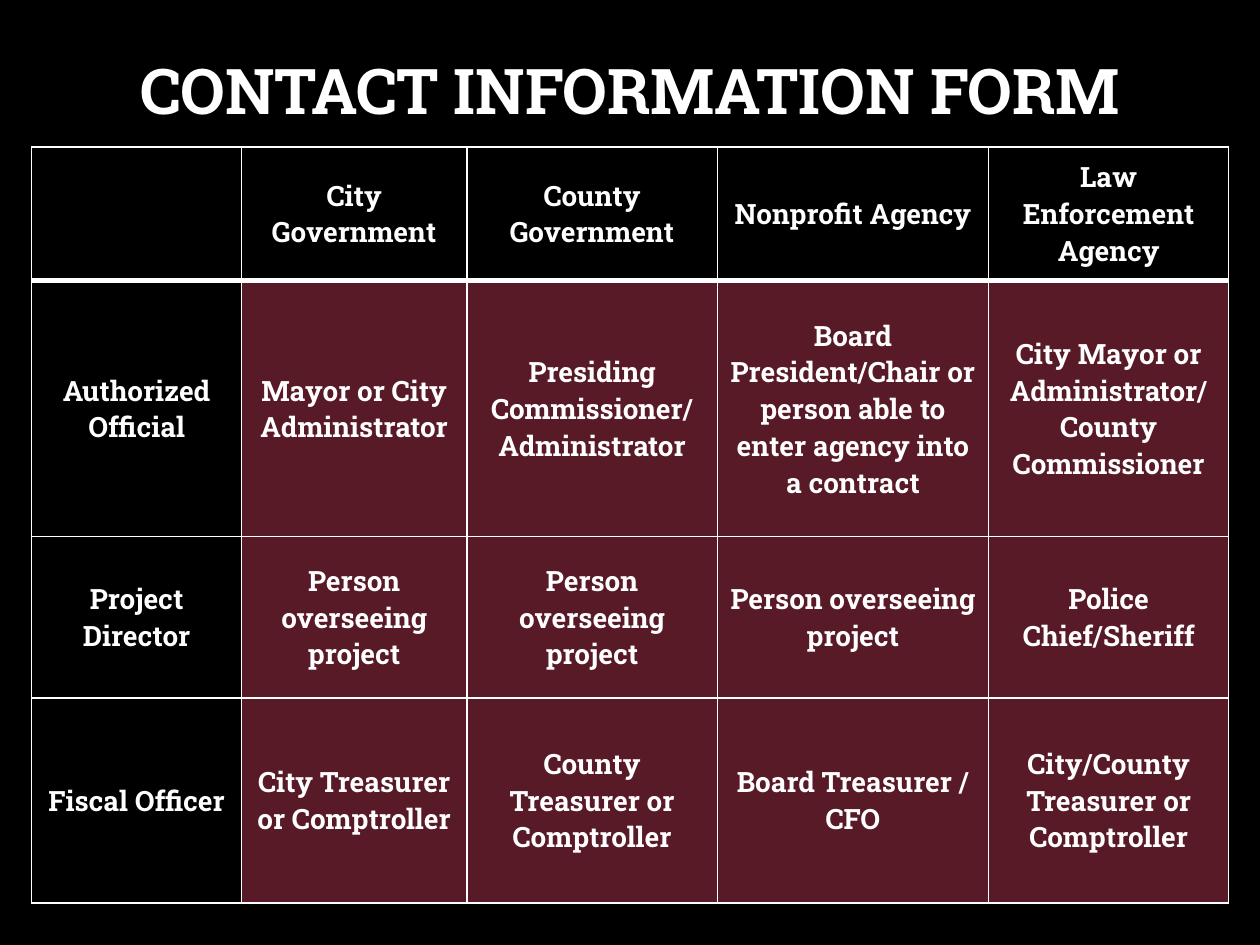
from lxml.etree import SubElement as Sub
from pptx import Presentation as Deck
from pptx.dml.color import RGBColor as RGB
from pptx.enum.text import MSO_ANCHOR as Anchor, PP_ALIGN as Align
from pptx.oxml.ns import qn
from pptx.util import Cm, Pt

BLACK = RGB(0x00, 0x00, 0x00)
WHITE = RGB(0xFF, 0xFF, 0xFF)
WINE = RGB(0x57, 0x1A, 0x26)

COLS = [4.23, 4.54, 5.05, 5.47, 4.84]
ROWS = [2.7, 5.16, 3.25, 4.13]
ROLES = [
    ["", "City Government", "County Government", "Nonprofit Agency",
     "Law Enforcement Agency"],
    ["Authorized Official", "Mayor or City Administrator",
     "Presiding Commissioner/ Administrator",
     "Board President/Chair or person able to enter agency into a contract",
     "City Mayor or Administrator/ County Commissioner"],
    ["Project Director"] + ["Person overseeing project"] * 3
    + ["Police Chief/Sheriff"],
    ["Fiscal Officer", "City Treasurer or Comptroller",
     "County Treasurer or Comptroller", "Board Treasurer / CFO",
     "City/County Treasurer or Comptroller"],
]


class Page:
    def __init__(self, slide, face, ink):
        self.slide, self.face, self.ink = slide, face, ink

    def back(self, color):
        fill = self.slide.background.fill
        fill.solid()
        fill.fore_color.rgb = color

    def label(self, frame, text, size):
        frame.text = text
        para = frame.paragraphs[0]
        para.alignment = Align.CENTER
        font = para.font
        font.name, font.size, font.bold = self.face, Pt(size), True
        font.color.rgb = self.ink
        return para

    def title(self, text, left, top, width, height):
        shape = self.slide.shapes.title
        shape.left, shape.top = Cm(left), Cm(top)
        shape.width, shape.height = Cm(width), Cm(height)
        shape.text_frame.vertical_anchor = Anchor.MIDDLE
        self.label(shape.text_frame, text, 36).line_spacing = 0.9

    def border(self, cell, base):
        """Draw all four sides; base is the bottom width in points."""
        props = cell._tc.get_or_add_tcPr()
        for side, width in (("L", 1), ("R", 1), ("T", 1), ("B", base)):
            line = Sub(props, qn("a:ln" + side), w=str(Pt(width)))
            Sub(Sub(line, qn("a:solidFill")), qn("a:srgbClr"),
                val=str(self.ink))

    def table(self, data, left, top, cols, rows):
        """Fill a grid whose first row and column are unfilled heads."""
        table = self.slide.shapes.add_table(
            len(rows), len(cols), Cm(left), Cm(top),
            Cm(sum(cols)), Cm(sum(rows))).table
        table.horz_banding = False
        for col, width in zip(table.columns, cols):
            col.width = Cm(width)
        for r, (row, height) in enumerate(zip(table.rows, rows)):
            row.height = Cm(height)
            for c, cell in enumerate(row.cells):
                self.label(cell.text_frame, data[r][c], 16)
                cell.vertical_anchor = Anchor.MIDDLE
                self.border(cell, 1 if r else 3)
                if r and c:
                    cell.fill.solid()
                    cell.fill.fore_color.rgb = WINE
                else:
                    cell.fill.background()


def main():
    deck = Deck()
    deck.slide_width, deck.slide_height = Cm(25.4), Cm(19.05)
    page = Page(deck.slides.add_slide(deck.slide_layouts[5]),
                "Roboto Slab", WHITE)
    page.back(BLACK)
    page.title("CONTACT INFORMATION FORM", 1.59, 0.85, 22.22, 2.1)
    page.table(ROLES, 0.64, 2.96, COLS, ROWS)
    deck.save("out.pptx")


if __name__ == "__main__":
    main()
